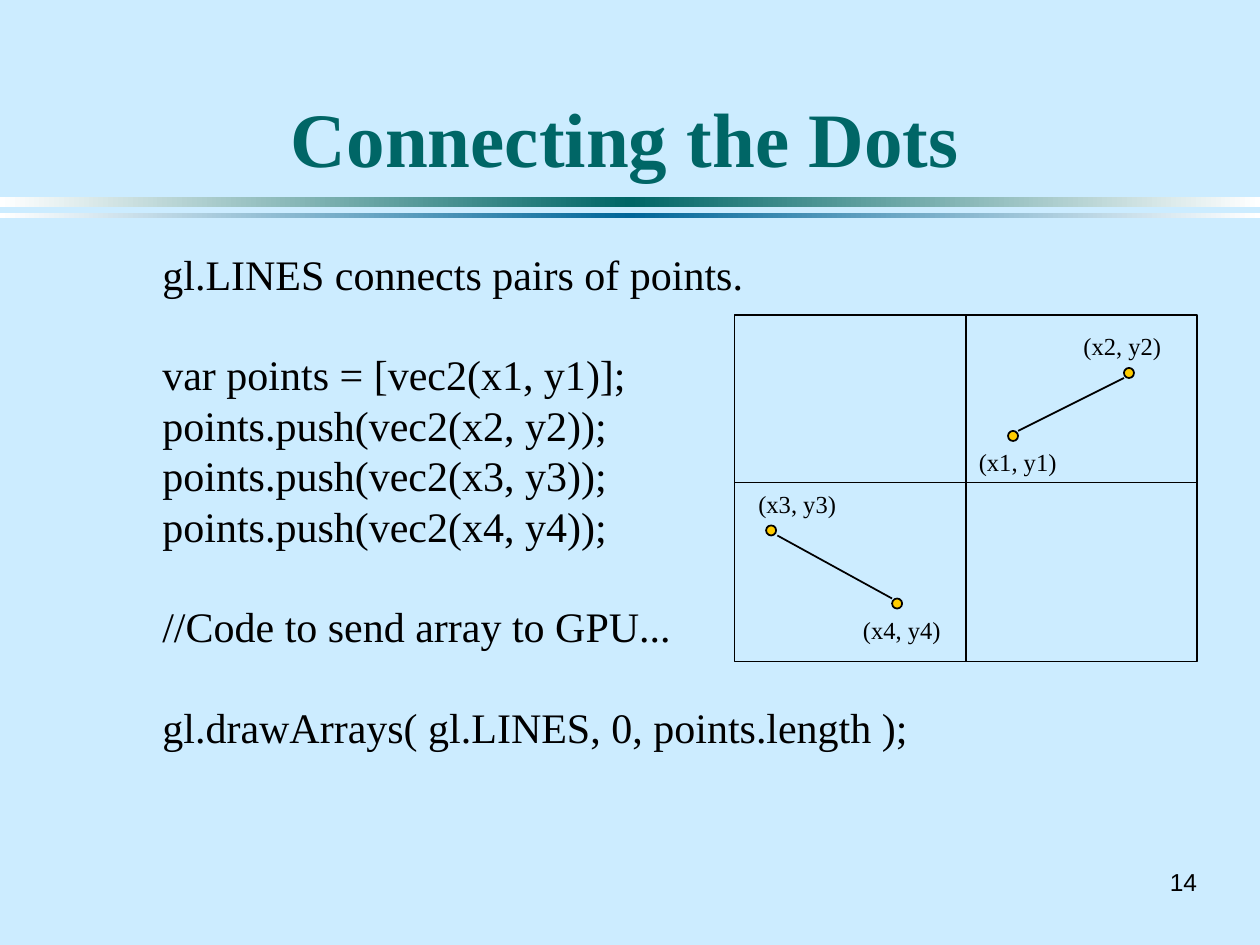
from copy import deepcopy

from lxml import etree
from pptx import Presentation
from pptx.dml.color import RGBColor
from pptx.enum.shapes import MSO_CONNECTOR, MSO_SHAPE
from pptx.enum.text import MSO_ANCHOR, PP_ALIGN
from pptx.oxml.ns import qn
from pptx.util import Inches, Pt

RECTANGLE, OVAL = MSO_SHAPE.RECTANGLE, MSO_SHAPE.OVAL
STRAIGHT = MSO_CONNECTOR.STRAIGHT
LEFT, CENTER, RIGHT = PP_ALIGN.LEFT, PP_ALIGN.CENTER, PP_ALIGN.RIGHT
TOP, MIDDLE, BOTTOM = MSO_ANCHOR.TOP, MSO_ANCHOR.MIDDLE, MSO_ANCHOR.BOTTOM

SKY = RGBColor(0xCC, 0xEC, 0xFF)
TEAL = RGBColor(0x00, 0x66, 0x66)
BLUE = RGBColor(0x00, 0x66, 0x99)
GOLD = RGBColor(0xFF, 0xCC, 0x00)
WHITE = RGBColor(0xFF, 0xFF, 0xFF)
BLACK = RGBColor(0x00, 0x00, 0x00)
SERIF, SANS = "Times New Roman", "Arial"

TITLE = "Connecting the Dots"
PAGE_NUMBER = "14"
BODY_BLOCKS = [
    ["gl.LINES connects pairs of points."],
    [
        "var points = [vec2(x1, y1)];",
        "points.push(vec2(x2, y2));",
        "points.push(vec2(x3, y3));",
        "points.push(vec2(x4, y4));",
    ],
    ["//Code to send array to GPU..."],
    ["gl.drawArrays( gl.LINES, 0, points.length );"],
]
BODY_PITCH = Pt(28.8)
RULES = [(1.56, 0.08, TEAL), (1.69, 0.04, BLUE)]

PLOT_LEFT, PLOT_TOP, PLOT_WIDTH, PLOT_HEIGHT = 5.83, 2.5, 3.67, 2.75
AXIS_X, AXIS_Y = PLOT_LEFT + PLOT_WIDTH / 2, 3.83
DOT_SIZE = 0.08
POINTS = [
    ("(x1, y1)", (8, 3.42), (7.67, 3.5)),
    ("(x2, y2)", (8.92, 2.92), (8.5, 2.58)),
    ("(x3, y3)", (6.08, 4.17), (5.92, 3.83)),
    ("(x4, y4)", (7.08, 4.75), (6.75, 4.83)),
]
LINES = [
    ((AXIS_X, PLOT_TOP), (AXIS_X, PLOT_TOP + PLOT_HEIGHT)),
    ((PLOT_LEFT, AXIS_Y), (PLOT_LEFT + PLOT_WIDTH, AXIS_Y)),
    ((8.08, 3.42), (8.92, 3)),
    ((6.17, 4.25), (7.08, 4.75)),
]


def inches(values):
    return [Inches(value) for value in values]


def add_outlined(slide, kind, box, color=None):
    shape = slide.shapes.add_shape(kind, *inches(box))
    shape.shadow.inherit = False
    if color is None:
        shape.fill.background()
    else:
        shape.fill.solid()
        shape.fill.fore_color.rgb = color
    shape.line.color.rgb = BLACK
    shape.line.width = Pt(1)


def add_rule(slide, top, height, color):
    shape = slide.shapes.add_shape(RECTANGLE, *inches((0, top, 10, height)))
    shape.shadow.inherit = False
    shape.line.fill.background()
    shape.fill.gradient()
    shape.fill.gradient_angle = 0
    first_stop = shape.fill._fill._gradFill.find(qn("a:gsLst"))[0]
    first_stop.addnext(deepcopy(first_stop))
    for stop, position, stop_color in zip(
        shape.fill.gradient_stops, (0, 0.5, 1), (WHITE, color, WHITE)
    ):
        stop.position = position
        stop.color.rgb = stop_color


def add_line(slide, start, end):
    line = slide.shapes.add_connector(STRAIGHT, *inches(start + end))
    line.line.color.rgb = BLACK
    line.line.width = Pt(1)
    etree.SubElement(line._element.spPr, qn("a:effectLst"))


def add_text(slide, box, text, size, font=SERIF, color=BLACK, bold=False,
             align=LEFT, anchor=TOP, wrap=False):
    text_frame = slide.shapes.add_textbox(*inches(box)).text_frame
    text_frame.word_wrap = wrap
    text_frame.vertical_anchor = anchor
    text_frame.text = text
    for paragraph in text_frame.paragraphs:
        paragraph.alignment = align
        for run in paragraph.runs:
            run.font.name = font
            run.font.size = Pt(size)
            run.font.bold = bold
            run.font.color.rgb = color
    return text_frame


def add_body(slide):
    text = "\n".join(line for block in BODY_BLOCKS for line in block)
    text_frame = add_text(slide, (1.19, 1.92, 6.89, 4.95), text, 24, wrap=True)
    block_starts = [block[0] for block in BODY_BLOCKS[1:]]
    for paragraph in text_frame.paragraphs:
        paragraph.line_spacing = BODY_PITCH
        if paragraph.text in block_starts:
            paragraph.space_before = BODY_PITCH


def add_plot(slide):
    add_outlined(slide, RECTANGLE, (PLOT_LEFT, PLOT_TOP, PLOT_WIDTH, PLOT_HEIGHT))
    for start, end in LINES:
        add_line(slide, start, end)
    for label, dot, label_corner in POINTS:
        add_outlined(slide, OVAL, dot + (DOT_SIZE, DOT_SIZE), GOLD)
        add_text(slide, label_corner + (0.82, 0.33), label, 14)


def main():
    presentation = Presentation()
    presentation.slide_width, presentation.slide_height = Inches(10), Inches(7.5)
    slide = presentation.slides.add_slide(presentation.slide_layouts[6])
    slide.background.fill.solid()
    slide.background.fill.fore_color.rgb = SKY
    for top, height, color in RULES:
        add_rule(slide, top, height, color)
    add_text(slide, (9.17, 6.83, 0.43, 0.33), PAGE_NUMBER, 14, font=SANS,
             align=RIGHT, anchor=MIDDLE)
    add_text(slide, (0.67, 0.25, 8.58, 1.25), TITLE, 44, color=TEAL, bold=True,
             align=CENTER, anchor=BOTTOM, wrap=True)
    add_body(slide)
    add_plot(slide)
    presentation.save("out.pptx")


if __name__ == "__main__":
    main()
